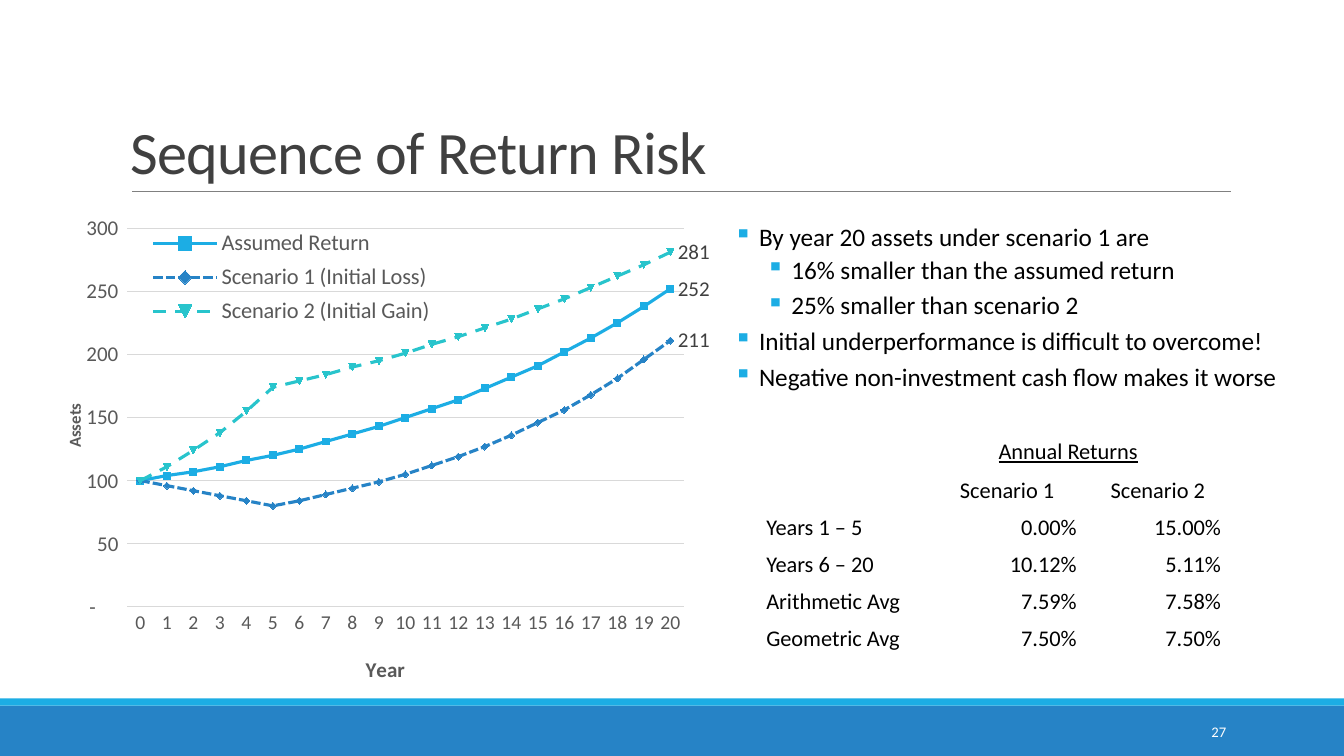
from dataclasses import dataclass

from lxml.etree import SubElement
from pptx import Presentation
from pptx.chart.data import CategoryChartData as ChartData
from pptx.dml.color import RGBColor
from pptx.enum.chart import XL_CHART_TYPE as ChartType, XL_LABEL_POSITION as LabelPos
from pptx.enum.chart import XL_LEGEND_POSITION as LegendPos, XL_TICK_MARK as Tick
from pptx.enum.dml import MSO_LINE as Dash
from pptx.enum.shapes import MSO_CONNECTOR as Link, MSO_SHAPE as Shape
from pptx.enum.text import MSO_ANCHOR as Anchor, PP_ALIGN as Align
from pptx.oxml import parse_xml
from pptx.oxml.ns import qn
from pptx.util import Inches, Pt

BLACK = RGBColor(0, 0, 0)
WHITE = RGBColor(255, 255, 255)
DARK = RGBColor(0x40, 0x40, 0x40)
GRAY = RGBColor(0x59, 0x59, 0x59)
RULE = RGBColor(0x80, 0x80, 0x80)
PALE = RGBColor(0xD9, 0xD9, 0xD9)
SKY = RGBColor(0x1C, 0xAD, 0xE4)
BLUE = RGBColor(0x26, 0x83, 0xC6)
TEAL = RGBColor(0x28, 0xC4, 0xCC)
FACE = "Calibri"
YEARS = 20
CASH = -4  # yearly flow out of the fund


@dataclass
class Band:
    top: float
    height: float
    color: RGBColor


@dataclass
class Path:
    name: str
    early: float  # return in years 1 to 5
    late: float  # return in later years
    color: RGBColor
    dash: Dash

    def assets(self) -> list[int]:
        funds = [100.0]
        for year in range(1, YEARS + 1):
            rate = self.early if year <= 5 else self.late
            funds.append(funds[-1] * (1 + rate) + CASH)
        return [round(fund) for fund in funds]


@dataclass
class Point:
    text: str
    indent: float = 0.25
    before: int = 2
    after: int = 4


BANDS = [Band(7, 0.5, BLUE), Band(6.93, 0.07, SKY)]
PATHS = [
    Path("Assumed Return", 0.075, 0.075, SKY, Dash.SOLID),
    Path("Scenario 1 (Initial Loss)", 0, 0.1012, BLUE, Dash.SQUARE_DOT),
    Path("Scenario 2 (Initial Gain)", 0.15, 0.0511, TEAL, Dash.DASH),
]
POINTS = [
    Point("By year 20 assets under scenario 1 are", before=12, after=2),
    Point("16% smaller than the assumed return", indent=0.57),
    Point("25% smaller than scenario 2", indent=0.57),
    Point("Initial underperformance is difficult to overcome!"),
    Point("Negative non-investment cash flow makes it worse"),
]
COLS = [1.48, 0.17, 1.56, 1.43]
ROWS = [
    ("", "Scenario 1", "Scenario 2"),
    ("Years 1 – 5", "0.00%", "15.00%"),
    ("Years 6 – 20", "10.12%", "5.11%"),
    ("Arithmetic Avg", "7.59%", "7.58%"),
    ("Geometric Avg", "7.50%", "7.50%"),
]


def style(font, size: float, color: RGBColor) -> None:
    font.name, font.size = FACE, Pt(size)
    font.color.rgb = color


def add_text(slide, box: tuple, anchor: Anchor):
    frame = slide.shapes.add_textbox(*map(Inches, box)).text_frame
    frame.word_wrap = True
    frame.vertical_anchor = anchor
    return frame


def add_line(slide, text: str, box: tuple, anchor: Anchor, size: float, color: RGBColor):
    para = add_text(slide, box, anchor).paragraphs[0]
    para.text = text
    style(para.font, size, color)
    return para


def add_band(slide, band: Band) -> None:
    bar = slide.shapes.add_shape(
        Shape.RECTANGLE, 0, Inches(band.top), Inches(13.33), Inches(band.height))
    bar.shadow.inherit = False
    bar.fill.solid()
    bar.fill.fore_color.rgb = band.color
    bar.line.fill.background()


def add_points(slide) -> None:
    frame = add_text(slide, (7.18, 2.18, 5.63, 1.82), Anchor.TOP)
    for i, point in enumerate(POINTS):
        para = frame.add_paragraph() if i else frame.paragraphs[0]
        para.text = point.text
        para.line_spacing = 0.9
        para.space_before, para.space_after = Pt(point.before), Pt(point.after)
        style(para.font, 18, BLACK)
        props = para._p.get_or_add_pPr()
        props.set("marL", str(Inches(point.indent)))
        props.set("indent", str(Inches(-0.25)))
        tint = SubElement(SubElement(props, qn("a:buClr")), qn("a:srgbClr"))
        tint.set("val", str(SKY))
        SubElement(props, qn("a:buChar")).set("char", "▪")


def place(part, index: int, **spots: float) -> None:
    """Set a chart part's layout, in shares of the chart's size."""
    for old in part.findall(qn("c:layout")):
        part.remove(old)
    space = "http://schemas.openxmlformats.org/drawingml/2006/chart"
    layout = parse_xml(f'<c:layout xmlns:c="{space}"><c:manualLayout/></c:layout>')
    inner = [("layoutTarget", "inner")] if index == 0 else []
    modes = [("xMode", "edge"), ("yMode", "edge")]
    for tag, val in inner + modes + list(spots.items()):
        SubElement(layout[0], qn(f"c:{tag}")).set("val", str(val))
    part.insert(index, layout)


def dress_axis(axis, title: str, size: float, title_size: float, x: float, y: float):
    style(axis.tick_labels.font, size, GRAY)
    axis.major_tick_mark = axis.minor_tick_mark = Tick.NONE
    frame = axis.axis_title.text_frame
    frame.text = title
    style(frame.paragraphs[0].font, title_size, GRAY)
    place(axis.axis_title._element, 1, x=x, y=y)
    return frame


def add_graph(slide) -> None:
    data = ChartData()
    data.categories = [str(year) for year in range(YEARS + 1)]
    for path in PATHS:
        data.add_series(path.name, path.assets())
    box = map(Inches, (0.53, 2.02, 6.65, 4.88))
    chart = slide.shapes.add_chart(ChartType.LINE, *box, data).chart
    chart.has_title = False
    style(chart.font, 10, BLACK)
    place(chart._chartSpace.chart.plotArea, 0, x=0.11, y=0.05, w=0.83, h=0.77)

    # Axes
    base, scale = chart.category_axis, chart.value_axis
    dress_axis(base, "Year", 14, 15, 0.46, 0.91)
    base.format.line.color.rgb = PALE
    base.format.line.width = Pt(0.75)
    frame = dress_axis(scale, "Assets", 15, 12, 0.01, 0.4)
    frame._txBody.bodyPr.set("rot", "-5400000")
    frame._txBody.bodyPr.set("vert", "horz")
    scale.minimum_scale, scale.maximum_scale, scale.major_unit = 0, 300, 50
    scale.format.line.fill.background()
    scale.major_gridlines.format.line.color.rgb = PALE
    scale.major_gridlines.format.line.width = Pt(0.75)
    scale.tick_labels.number_format = r'_(* #,##0_);_(* \(#,##0\);_(* "-"??_);_(@_)'
    scale.tick_labels.number_format_is_linked = False

    # Legend
    chart.has_legend = True
    chart.legend.position = LegendPos.LEFT
    chart.legend.include_in_layout = False
    style(chart.legend.font, 16, GRAY)
    place(chart.legend._element, 1, x=0.14, y=0.04, w=0.43, h=0.22)

    # Lines, each with its last value
    for path, series in zip(PATHS, chart.plots[0].series):
        series.smooth = False
        series.marker.style = None
        line = series.format.line
        line.color.rgb, line.width, line.dash_style = path.color, Pt(2.25), path.dash
        label = series.points[YEARS].data_label
        style(label.font, 15, DARK)
        label.position = LabelPos.RIGHT


def fill_cell(cell, text: str, align: Align, right: float):
    cell.vertical_anchor = Anchor.MIDDLE
    cell.margin_right = Inches(right)
    para = cell.text_frame.paragraphs[0]
    para.text, para.alignment = text, align
    style(para.font, 16, BLACK)
    return para


def add_grid(slide) -> None:
    box = map(Inches, (7.5, 4.28, sum(COLS), 2.2))
    grid = slide.shapes.add_table(len(ROWS) + 1, len(COLS), *box).table
    grid.first_row = grid.horz_banding = False
    for col, width in zip(grid.columns, COLS):
        col.width = Inches(width)
    for cell in grid.iter_cells():
        cell.fill.background()
    grid.cell(0, 1).merge(grid.cell(0, 3))
    fill_cell(grid.cell(0, 1), "Annual Returns", Align.CENTER, 0.04).font.underline = True
    for r, (name, *rates) in enumerate(ROWS, 1):
        grid.cell(r, 0).merge(grid.cell(r, 1))
        fill_cell(grid.cell(r, 0), name, Align.LEFT, 0.04)
        align, right = (Align.CENTER, 0) if r == 1 else (Align.RIGHT, 0.04)
        for c, rate in enumerate(rates, 2):
            fill_cell(grid.cell(r, c), rate, align, right)


def main() -> None:
    deck = Presentation()
    deck.slide_width, deck.slide_height = Inches(13.33), Inches(7.5)
    slide = deck.slides.add_slide(deck.slide_layouts[6])

    # Footer bands and title rule
    for band in BANDS:
        add_band(slide, band)
    rule = slide.shapes.add_connector(
        Link.STRAIGHT, *map(Inches, (1.31, 1.9, 12.21, 1.9)))
    rule.line.color.rgb, rule.line.width = RULE, Pt(0.5)
    SubElement(rule._element.spPr, qn("a:effectLst"))

    # Title
    title = add_line(slide, "Sequence of Return Risk", (1.2, 0.31, 11, 1.59),
                     Anchor.BOTTOM, 43, DARK)
    title.line_spacing = 0.85
    title.runs[0]._r.get_or_add_rPr().set("spc", "-50")

    # Body
    add_points(slide)
    add_graph(slide)
    add_grid(slide)

    # Slide number
    number = add_line(slide, "27", (10.83, 7.06, 1.43, 0.4), Anchor.MIDDLE, 10.5, WHITE)
    number.alignment = Align.RIGHT
    deck.save("out.pptx")


if __name__ == "__main__":
    main()
